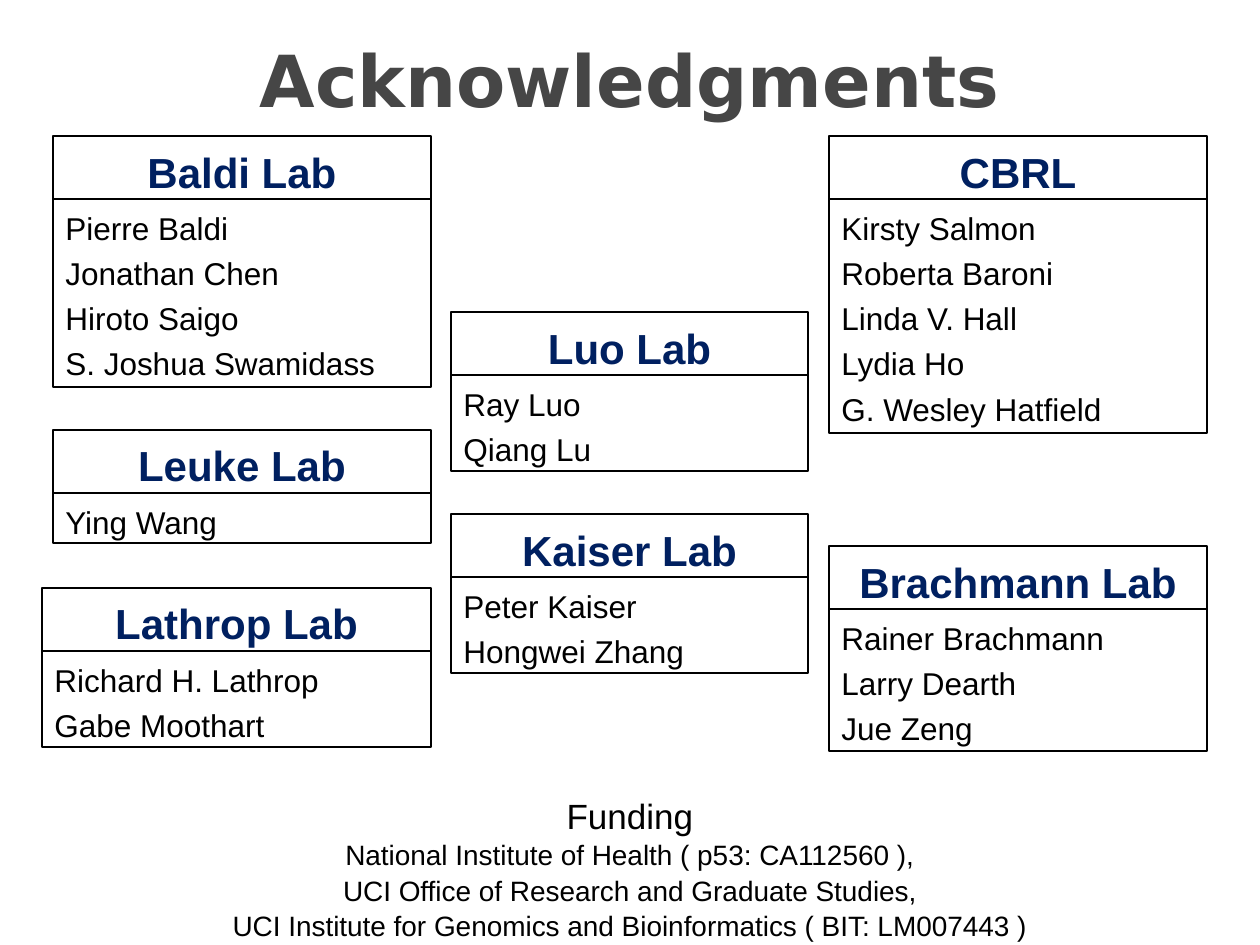
from pptx import Presentation
from pptx import util as u
from pptx.dml.color import RGBColor
from pptx.enum import shapes, text

NAVY = RGBColor(0x00, 0x20, 0x60)
BLACK = RGBColor(0x00, 0x00, 0x00)
GREY = RGBColor(0x46, 0x46, 0x46)
PX_PER_INCH = 126
HEADER_HEIGHT = 63
NAME_HEIGHT = 46
BODY_EXTRA = 4

LABS = [
    ("Baldi Lab", (53, 136, 378),
     ["Pierre Baldi", "Jonathan Chen", "Hiroto Saigo", "S. Joshua Swamidass"]),
    ("Leuke Lab", (53, 430, 378), ["Ying Wang"]),
    ("Lathrop Lab", (42, 588, 389), ["Richard H. Lathrop", "Gabe Moothart"]),
    ("Luo Lab", (451, 312, 357), ["Ray Luo", "Qiang Lu"]),
    ("Kaiser Lab", (451, 514, 357), ["Peter Kaiser", "Hongwei Zhang"]),
    ("CBRL", (829, 136, 378),
     ["Kirsty Salmon", "Roberta Baroni", "Linda V. Hall", "Lydia Ho", "G. Wesley Hatfield"]),
    ("Brachmann Lab", (829, 546, 378), ["Rainer Brachmann", "Larry Dearth", "Jue Zeng"]),
]
FUNDERS = [
    "National Institute of Health ( p53: CA112560 ),",
    "UCI Office of Research and Graduate Studies,",
    "UCI Institute for Genomics and Bioinformatics ( BIT: LM007443 )",
]


def px(length):
    """Turn pixels into EMU."""
    return u.Emu(round(length * u.Inches(1) / PX_PER_INCH))


def write_lines(shape, lines, size, color, align, bold=False, gap=0, face="Arial"):
    """Add one paragraph per line to the shape, with a gap between them."""
    frame = shape.text_frame
    frame.word_wrap = True
    for index, line in enumerate(lines):
        first = index == 0 and not frame.text
        para = frame.paragraphs[0] if first else frame.add_paragraph()
        para.text = line
        para.alignment = align
        para.space_before = u.Pt(0 if first else gap)
        para.font.size = u.Pt(size)
        para.font.name = face
        para.font.bold = bold
        para.font.color.rgb = color


def add_frame(group, left, top, width, height):
    """Add an outlined rectangle with its text at the top."""
    box = group.shapes.add_shape(
        shapes.MSO_SHAPE.RECTANGLE, px(left), px(top), px(width), px(height))
    box.shadow.inherit = False
    box.fill.background()
    box.line.color.rgb = BLACK
    box.line.width = u.Pt(0.75)
    box.text_frame.vertical_anchor = text.MSO_ANCHOR.TOP
    box.text_frame.margin_top = px(10)
    box.text_frame.margin_bottom = 0
    return box


def add_lab(page, name, place, members):
    """Place a lab's heading above the list of its members."""
    left, top, width = place
    group = page.shapes.add_group_shape()
    body_height = NAME_HEIGHT * len(members) + BODY_EXTRA
    body = add_frame(group, left, top + HEADER_HEIGHT, width, body_height)
    write_lines(body, members, 18, BLACK, text.PP_ALIGN.LEFT, gap=4.2)
    heading = add_frame(group, left, top, width, HEADER_HEIGHT)
    write_lines(heading, [name], 24, NAVY, text.PP_ALIGN.CENTER, bold=True)


def add_title(page, left, top, width, height):
    """Place the slide title in the middle of its box."""
    box = page.shapes.add_textbox(px(left), px(top), px(width), px(height))
    box.text_frame.vertical_anchor = text.MSO_ANCHOR.MIDDLE
    write_lines(box, ["Acknowledgments"], 41, GREY, text.PP_ALIGN.CENTER,
                bold=True, face="DejaVu Sans")


def add_funding(page, left, top, width, height):
    """Place the funding heading and its sources."""
    box = page.shapes.add_textbox(px(left), px(top), px(width), px(height))
    write_lines(box, ["Funding"], 20, BLACK, text.PP_ALIGN.CENTER)
    write_lines(box, FUNDERS, 16, BLACK, text.PP_ALIGN.CENTER, gap=1)


def main():
    """Build the acknowledgments slide."""
    deck = Presentation()
    deck.slide_width, deck.slide_height = px(1260), px(945)
    page = deck.slides.add_slide(deck.slide_layouts[6])
    add_title(page, 63, 0, 1134, 158)
    for name, place, members in LABS:
        add_lab(page, name, place, members)
    add_funding(page, 0, 788, 1260, 157)
    deck.save("out.pptx")


if __name__ == "__main__":
    main()
